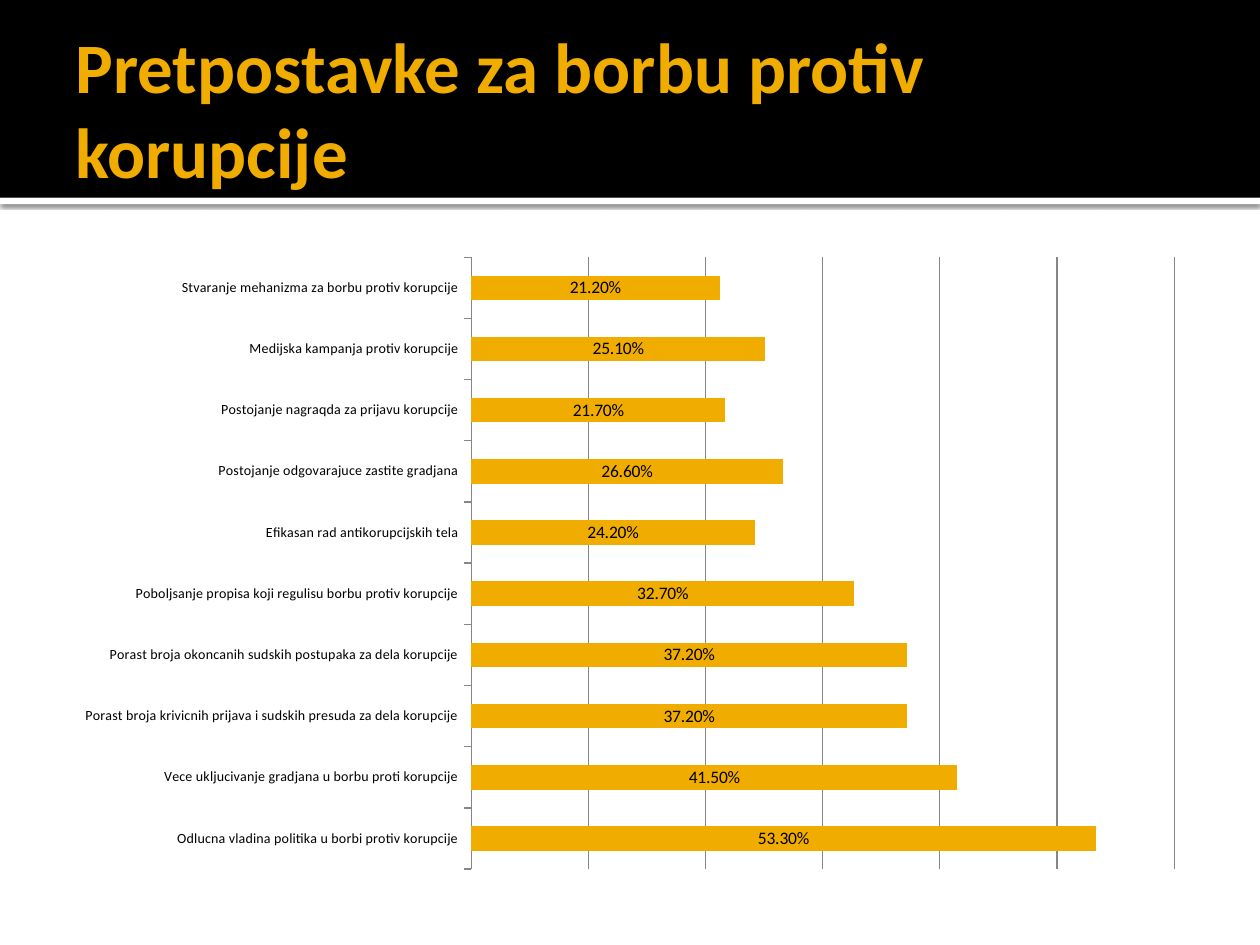
from lxml.etree import SubElement
from pptx import Presentation
from pptx.chart.data import CategoryChartData
from pptx.dml.color import RGBColor
from pptx.enum.chart import XL_CHART_TYPE, XL_LABEL_POSITION, XL_TICK_LABEL_POSITION, XL_TICK_MARK
from pptx.enum.shapes import MSO_SHAPE
from pptx.enum.text import MSO_ANCHOR, MSO_AUTO_SIZE, PP_ALIGN
from pptx.oxml import parse_xml
from pptx.oxml.ns import nsdecls, qn
from pptx.util import Inches, Pt

TITLE = "Pretpostavke za borbu protiv korupcije"
MEASURES = [  # from the bottom bar to the top one
    ("Odlucna vladina politika u borbi protiv korupcije", 0.533),
    ("Vece ukljucivanje gradjana u borbu proti korupcije", 0.415),
    ("Porast broja krivicnih prijava i sudskih presuda za dela korupcije", 0.372),
    ("Porast broja okoncanih sudskih postupaka za dela korupcije", 0.372),
    ("Poboljsanje propisa koji regulisu borbu protiv korupcije", 0.327),
    ("Efikasan rad antikorupcijskih tela", 0.242),
    ("Postojanje odgovarajuce zastite gradjana", 0.266),
    ("Postojanje nagraqda za prijavu korupcije", 0.217),
    ("Medijska kampanja protiv korupcije", 0.251),
    ("Stvaranje mehanizma za borbu protiv korupcije", 0.212),
]
FONT = "Calibri"
GOLD, BLACK, WHITE, GRAY = "F0AD00", "000000", "FFFFFF", "868686"
PERCENT = "0.00%"
WIDTH, HEIGHT = Inches(10), Inches(7.5)
MARGIN = Inches(0.5)
CONTENT_WIDTH = WIDTH - 2 * MARGIN
HEADER_HEIGHT = Inches(1.57)
PLOT_SHARES = {"x": 0.36, "y": 0.02, "w": 0.62, "h": 0.96}


def color(value):
    return RGBColor.from_string(value)


def set_font(font, size, value):
    font.name, font.size, font.color.rgb = FONT, Pt(size), color(value)


def add_band(slide, top, height, fill):
    band = slide.shapes.add_shape(MSO_SHAPE.RECTANGLE, 0, top, WIDTH, height)
    band.fill.solid()
    band.fill.fore_color.rgb = color(fill)
    band.line.fill.background()
    band.shadow.inherit = False
    return band


def add_shadow(shape):
    effects = shape._element.spPr.find(qn("a:effectLst"))
    effects.append(parse_xml(
        f'<a:outerShdw {nsdecls("a")} blurRad="{Pt(2.5)}" dist="{Pt(0.8)}" dir="5400000">'
        f'<a:srgbClr val="{BLACK}"><a:alpha val="60000"/></a:srgbClr></a:outerShdw>'))


def place_title(slide):
    title = slide.shapes.title
    title.left, title.top = MARGIN, Inches(0.17)
    title.width, title.height = CONTENT_WIDTH, Inches(1.37)
    frame = title.text_frame
    frame.text = TITLE
    frame.word_wrap, frame.auto_size = True, MSO_AUTO_SIZE.NONE
    frame.vertical_anchor = MSO_ANCHOR.MIDDLE
    frame.margin_left = Inches(0.1)
    frame.margin_right = frame.margin_top = frame.margin_bottom = Inches(0.05)
    paragraph = frame.paragraphs[0]
    paragraph.alignment = PP_ALIGN.LEFT
    set_font(paragraph.font, 40.5, GOLD)
    paragraph.font.bold = True
    slide.shapes._spTree.append(title._element)  # in front of the header bands


def fix_plot_area(chart):
    """Hold the inner plot area at fixed shares of the chart frame."""
    plot_area = chart._chartSpace.chart.plotArea
    layout = plot_area.find(qn("c:layout"))
    if layout is None:
        layout = plot_area.makeelement(qn("c:layout"))
        plot_area.insert(0, layout)
    manual = SubElement(layout, qn("c:manualLayout"))
    settings = {"layoutTarget": "inner", "xMode": "edge", "yMode": "edge", **PLOT_SHARES}
    for name, value in settings.items():
        SubElement(manual, qn(f"c:{name}")).set("val", str(value))


def add_measures_chart(slide):
    data = CategoryChartData(number_format=PERCENT)
    data.categories = [name for name, _ in MEASURES]
    data.add_series("Series 1", [share for _, share in MEASURES])
    chart = slide.shapes.add_chart(
        XL_CHART_TYPE.BAR_STACKED, MARGIN, Inches(1.94), CONTENT_WIDTH, Inches(5.06), data).chart
    chart.has_title = chart.has_legend = False
    set_font(chart.font, 10, BLACK)

    categories = chart.category_axis
    categories.major_tick_mark = XL_TICK_MARK.OUTSIDE
    categories.tick_label_position = XL_TICK_LABEL_POSITION.LOW
    set_font(categories.tick_labels.font, 8, BLACK)
    categories.format.line.color.rgb = color(GRAY)

    values = chart.value_axis
    values.minimum_scale, values.maximum_scale, values.major_unit = 0, 0.6, 0.1
    values.has_major_gridlines = True
    values.major_gridlines.format.line.color.rgb = color(GRAY)
    values.tick_labels.number_format = PERCENT
    values.tick_labels.number_format_is_linked = False
    values.visible = False

    plot = chart.plots[0]
    plot.gap_width, plot.overlap, plot.vary_by_categories = 150, 100, False
    series = plot.series[0]
    series.format.fill.solid()
    series.format.fill.fore_color.rgb = color(GOLD)
    labels = series.data_labels
    labels.show_value = True
    labels.number_format, labels.number_format_is_linked = PERCENT, False
    labels.position = XL_LABEL_POSITION.CENTER
    set_font(labels.font, 10, BLACK)
    fix_plot_area(chart)


def main():
    presentation = Presentation()
    presentation.slide_width, presentation.slide_height = WIDTH, HEIGHT
    slide = presentation.slides.add_slide(presentation.slide_layouts.get_by_name("Title Only"))
    add_shadow(add_band(slide, HEADER_HEIGHT, Inches(0.05), WHITE))
    add_band(slide, 0, HEADER_HEIGHT, BLACK)
    place_title(slide)
    add_measures_chart(slide)
    presentation.save("out.pptx")


if __name__ == "__main__":
    main()
